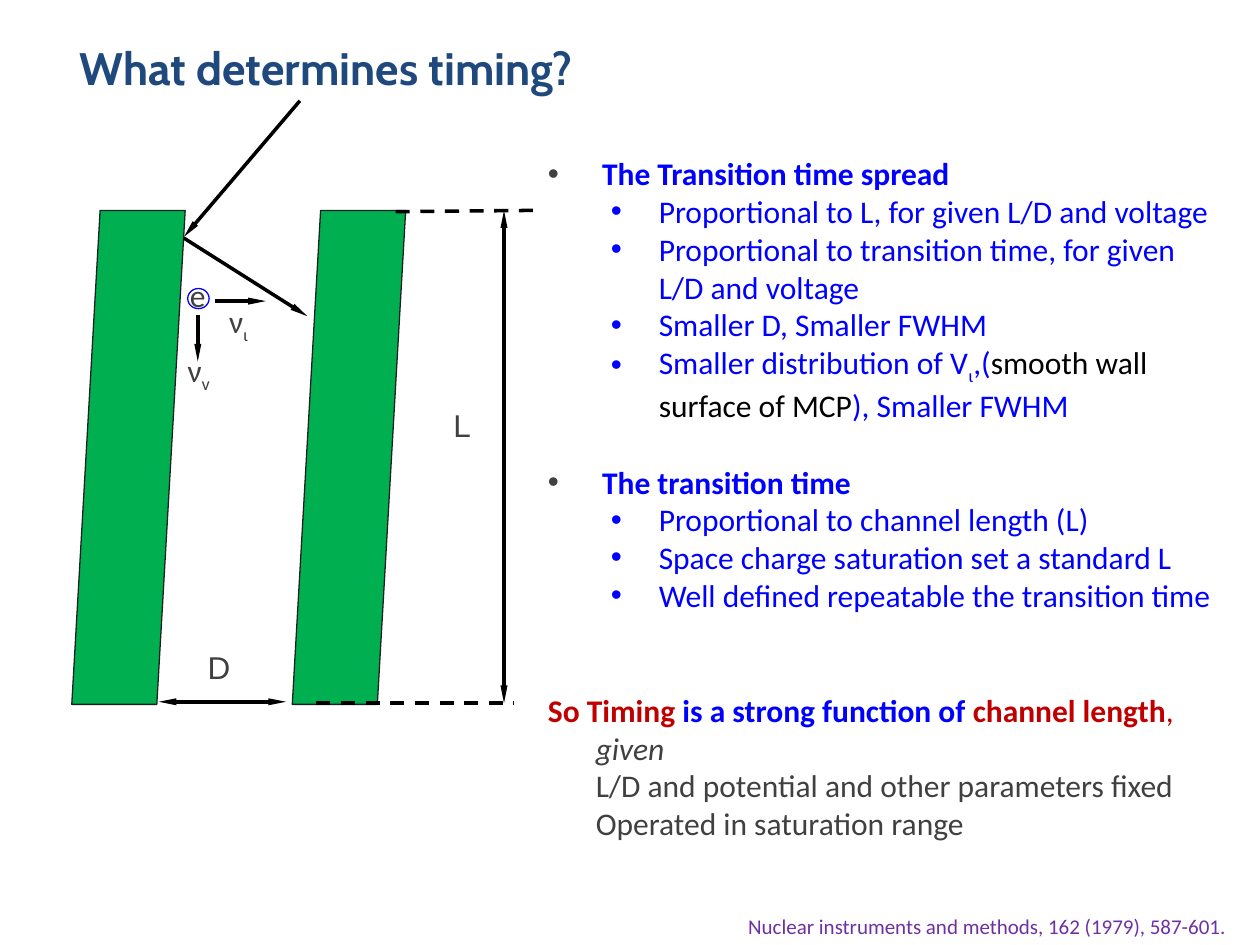
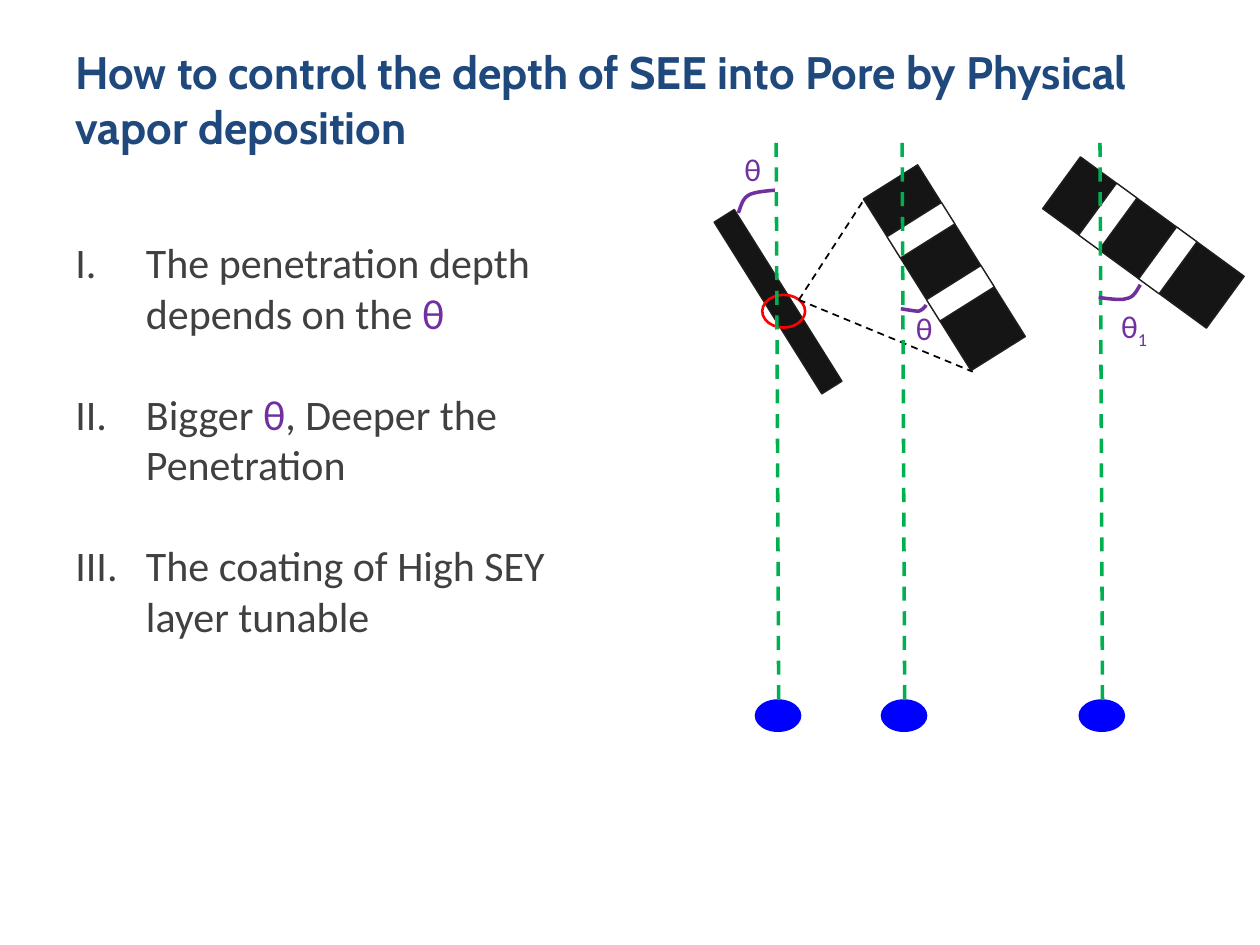
"""Build two slides on channel timing and coating depth."""
from math import cos, radians, sin

from lxml.etree import SubElement
from pptx import Presentation
from pptx.dml.color import RGBColor
from pptx.enum.dml import MSO_LINE as Dash
from pptx.enum.shapes import MSO_CONNECTOR as Link, MSO_SHAPE as Kind
from pptx.enum.text import MSO_ANCHOR as Anchor, PP_ALIGN as Align
from pptx.oxml.ns import qn
from pptx.util import Pt

NAVY = RGBColor(0x1F, 0x49, 0x7D)
GRAY = RGBColor(0x40, 0x40, 0x40)
BLUE = RGBColor(0x00, 0x00, 0xFF)
RED = RGBColor(0xC0, 0x00, 0x00)
BRIGHT = RGBColor(0xFF, 0x00, 0x00)
GREEN = RGBColor(0x00, 0xB0, 0x50)
PURPLE = RGBColor(0x70, 0x30, 0xA0)
BLACK = RGBColor(0x00, 0x00, 0x00)
WHITE = RGBColor(0xFF, 0xFF, 0xFF)
COAL = RGBColor(0x15, 0x15, 0x15)
EDGE = RGBColor(0x20, 0x20, 0x20)

deck = Presentation()
deck.slide_width, deck.slide_height = 9144000, 6858000
COL, ROW = deck.slide_width // 100, deck.slide_height // 75


def grid(*spots):
    """Turn alternating columns and rows into lengths."""
    return [round(spot * (ROW if i % 2 else COL)) for i, spot in enumerate(spots)]


def fill(para, runs, size, face="Calibri"):
    """Add runs of (text, colour, marks), where marks are b, i or s for subscript."""
    for text, color, marks in runs:
        run = para.add_run()
        run.text = text
        font = run.font
        font.name, font.size, font.color.rgb = face, Pt(size), color
        font.bold, font.italic = "b" in marks, "i" in marks
        if "s" in marks:
            run._r.get_or_add_rPr().set("baseline", "-25000")


heads = [
    ("What determines timing?", (5.3, 2.7, 90, 7.6)),
    ("How to control the depth of SEE into Pore by Physical vapor deposition",
     (5, 3, 90, 12.5)),
]
slides = []
for text, box in heads:
    slide = deck.slides.add_slide(deck.slide_layouts[5])
    title = slide.shapes.title
    title.left, title.top, title.width, title.height = grid(*box)
    title.text_frame.vertical_anchor = Anchor.TOP
    title.text_frame.word_wrap = True
    para = title.text_frame.paragraphs[0]
    para.alignment = Align.LEFT
    fill(para, [(text, NAVY, "b")], 26, "Cabin")
    slides.append(slide)
timing, depth = slides

lamps = [59.9, 69.9, 85.6]
forms = [(timing, Kind.PARALLELOGRAM, (x, 16.7, 9, 39.2), 0, GREEN, EDGE, 0.75)
         for x in (5.7, 23.2)]
forms.append((timing, Kind.OVAL, (14.9, 22.9, 1.7, 1.6), 0, None, BLUE, 0.75))
forms += [(depth, Kind.OVAL, (x, 55.5, 3.7, 2.6), 0, BLUE, None, 0) for x in lamps]
forms.append((depth, Kind.RECTANGLE, (53.7, 23, 16.1, 1.9), 57.9, COAL, EDGE, 0.75))
for midx, midy, turn in [(74.95, 21.25, 57.9), (90.75, 19.25, 36.1)]:
    for shift, wide, paint in [(0, 16.1, COAL), (-3.5, 2, WHITE), (2.4, 2, WHITE)]:
        left = midx + shift * cos(radians(turn)) - wide / 2
        top = midy + shift * sin(radians(turn)) - 5.1 / 2
        forms.append((depth, Kind.RECTANGLE, (left, top, wide, 5.1), turn, paint, EDGE, 0.75))
forms.append((depth, Kind.OVAL, (60.5, 23.4, 3.4, 2.6), 0, None, BRIGHT, 1.5))

for slide, kind, box, turn, paint, edge, width in forms:
    shape = slide.shapes.add_shape(kind, *grid(*box))
    shape.shadow.inherit = False
    shape.rotation = turn
    if paint is None:
        shape.fill.background()
    else:
        shape.fill.solid()
        shape.fill.fore_color.rgb = paint
    if edge is None:
        shape.line.fill.background()
    else:
        shape.line.color.rgb, shape.line.width = edge, Pt(width)

lines = [
    (timing, (23.8, 8, 14.6, 18.8), BLACK, 2, False, ["tailEnd"]),
    (timing, (14.6, 18.9, 24.4, 25.1), BLACK, 2, False, ["tailEnd"]),
    (timing, (17.1, 23.9, 21.1, 23.9), BLACK, 2, False, ["tailEnd"]),
    (timing, (15.7, 25, 15.7, 28.7), BLACK, 2, False, ["tailEnd"]),
    (timing, (40, 16.7, 40, 55.8), BLACK, 2, False, ["headEnd", "tailEnd"]),
    (timing, (12.6, 55.7, 22.7, 55.7), BLACK, 2, False, ["headEnd", "tailEnd"]),
    (timing, (31.4, 16.8, 42.5, 16.7), BLACK, 2, True, []),
    (timing, (25.1, 55.8, 40.8, 55.8), BLACK, 2, True, []),
    (depth, (63.4, 23.8, 68.6, 15.8), BLACK, 1, True, []),
    (depth, (63.4, 23.8, 77.2, 29.5), BLACK, 1, True, []),
]
lines += [(depth, (x + 1.9, 55.5, x + 1.7, 11.2), GREEN, 2, True, []) for x in lamps]
for slide, ends, color, width, dashed, tips in lines:
    link = slide.shapes.add_connector(Link.STRAIGHT, *grid(*ends))
    link.line.color.rgb, link.line.width = color, Pt(width)
    if dashed:
        link.line.dash_style = Dash.DASH
    for tip in tips:
        SubElement(link.line._get_or_add_ln(), qn("a:" + tip),
                   type="triangle", w="sm", len="lg")
    SubElement(link._element.spPr, qn("a:effectLst"))

arcs = [
    [(58.6, 16.9), (58.8, 16.4), (58.9, 15.8), (59.4, 15.5),
     (59.8, 15.2), (61.5, 15.1), (61.5, 15.1)],
    [(73.5, 24.2), (73.4, 24.4), (73.2, 24.6), (72.9, 24.7),
     (72.6, 24.7), (71.5, 24.5), (71.5, 24.5)],
    [(90.5, 22.6), (90.2, 23.1), (90, 23.6), (89.4, 23.7),
     (88.9, 23.9), (87.2, 23.6), (87.2, 23.6)],
]
for arc in arcs:
    spots = []
    for part in (arc[:4], arc[3:]):
        for step in range(1, 9):
            t = step / 8
            parts = ((1 - t) ** 3, 3 * t * (1 - t) ** 2, 3 * t * t * (1 - t), t ** 3)
            spots.append(grid(*(sum(w * p[axis] for w, p in zip(parts, part))
                                for axis in (0, 1))))
    pen = depth.shapes.build_freeform(*grid(*arc[0]))
    pen.add_line_segments(spots, close=False)
    curve = pen.convert_to_shape()
    curve.shadow.inherit = False
    curve.fill.background()
    curve.line.color.rgb, curve.line.width = PURPLE, Pt(2)

labels = [
    (timing, (35, 31.7, 3.4, 4), [("L", GRAY, "")], 18, "Arial"),
    (timing, (15.5, 50.9, 3.8, 4), [("D", GRAY, "")], 18, "Arial"),
    (timing, (14.1, 21.4, 3.4, 4), [("e", GRAY, "")], 18, "Calibri"),
    (timing, (13.9, 27.4, 3.9, 4), [("ν", GRAY, ""), ("v", GRAY, "s")], 18, "Calibri"),
    (timing, (17.2, 23.5, 3.6, 4), [("ν", GRAY, ""), ("ι", GRAY, "s")], 18, "Calibri"),
    (timing, (58.4, 72, 41.6, 3),
     [("Nuclear instruments and methods, 162 (1979), 587-601.", PURPLE, "")], 12, "Calibri"),
    (depth, (58.1, 11.4, 3.4, 4), [("θ", PURPLE, "")], 18, "Calibri"),
    (depth, (71.7, 24, 3.4, 4), [("θ", PURPLE, "")], 18, "Calibri"),
    (depth, (88, 23.9, 4.2, 4), [("θ", PURPLE, ""), ("1", PURPLE, "s")], 18, "Calibri"),
]
for slide, box, runs, size, face in labels:
    frame = slide.shapes.add_textbox(*grid(*box)).text_frame
    frame.word_wrap = False
    fill(frame.paragraphs[0], runs, size, face)

HEAD, ITEM, CLOSE, MORE = (4.3, -4.3, 0), (8.8, -3.8, 1), (3.8, -3.8, 0), (3.8, 0, 0)
points = [
    (HEAD, 0, [("The Transition time spread", BLUE, "b")]),
    (ITEM, 0, [("Proportional to L, for given L/D and voltage", BLUE, "")]),
    (ITEM, 0, [("Proportional to transition time, for given L/D and voltage", BLUE, "")]),
    (ITEM, 0, [("Smaller D, Smaller FWHM", BLUE, "")]),
    (ITEM, 0, [("Smaller distribution of V", BLUE, ""), ("ι", BLUE, "s"), (",(", BLUE, ""),
               ("smooth wall surface of MCP", BLACK, ""), ("), Smaller FWHM", BLUE, "")]),
    (HEAD, 22, [("The transition time", BLUE, "b")]),
    (ITEM, 0, [("Proportional to channel length (L)", BLUE, "")]),
    (ITEM, 0, [("Space charge saturation set a standard L", BLUE, "")]),
    (ITEM, 0, [("Well defined repeatable the transition time", BLUE, "")]),
    (CLOSE, 44, [("So Timing ", RED, "b"), ("is a strong function of ", BLUE, "b"),
                 ("channel length", RED, "b"), (", ", RED, ""), ("given", GRAY, "i")]),
    (MORE, 0, [("L/D and potential and other parameters fixed Operated in saturation range",
                GRAY, "")]),
]
STEP = (5.6, -5.6, 0)
steps = [
    (STEP, 0, [("The penetration depth depends on the ", GRAY, ""), ("θ", PURPLE, "")]),
    (STEP, 29, [("Bigger ", GRAY, ""), ("θ", PURPLE, ""),
                (", Deeper the Penetration", GRAY, "")]),
    (STEP, 29, [("The coating of High SEY layer tunable", GRAY, "")]),
]
for slide, box, items, size in [(timing, (42.5, 11.75, 55.8, 55.5), points, 18),
                                (depth, (5, 18.3, 45.5, 36.4), steps, 24)]:
    frame = slide.shapes.add_textbox(*grid(*box)).text_frame
    frame.word_wrap = True
    for i, (style, gap, runs) in enumerate(items):
        para = frame.add_paragraph() if i else frame.paragraphs[0]
        margin, hang, para.level = style
        props = para._p.get_or_add_pPr()
        props.set("marL", str(round(margin * COL)))
        props.set("indent", str(round(hang * COL)))
        if style in (HEAD, ITEM):
            tint = SubElement(props, qn("a:buClr"))
            SubElement(tint, qn("a:srgbClr"), val=str(GRAY if style == HEAD else BLUE))
            SubElement(props, qn("a:buFont"), typeface="Arial")
            SubElement(props, qn("a:buChar"), char="•")
        elif style == STEP:
            SubElement(props, qn("a:buFont"), typeface="+mj-lt")
            SubElement(props, qn("a:buAutoNum"), type="romanUcPeriod")
        if gap:
            para.space_before = Pt(gap)
        fill(para, runs, size)

deck.save("out.pptx")
